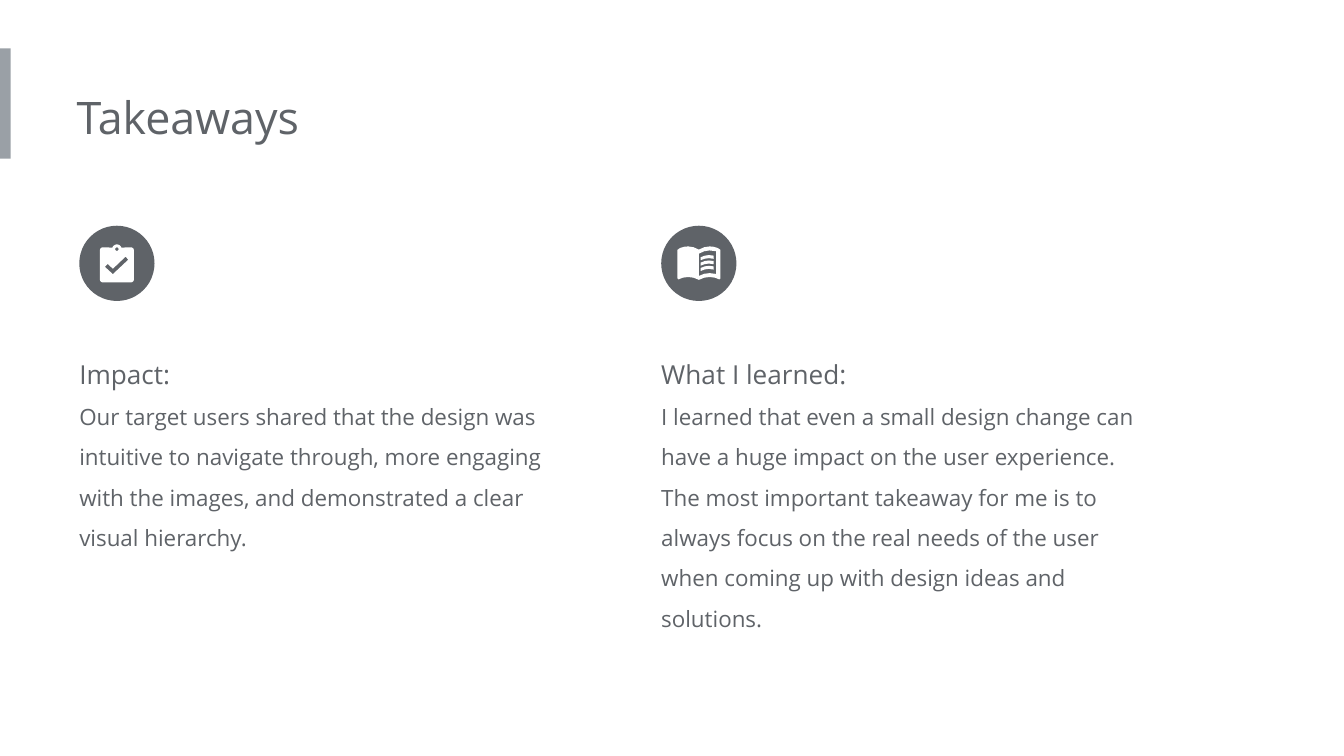
from dataclasses import dataclass
from math import cos, radians, sin

from pptx import Presentation
from pptx import util as u
from pptx.dml.color import RGBColor
from pptx.enum import shapes, text

COLUMNS = 1000
CELL = u.Inches(0.01)
ICON_UNITS = 560
FONT = "Open Sans"
GRAY, ACCENT, WHITE = "5F6368", "9AA0A6", "FFFFFF"


@dataclass
class Box:
    """A rectangle counted in grid columns and rows."""
    left: int
    top: int
    width: int
    height: int

    def lengths(self):
        """Return left, top, width and height as slide lengths."""
        return [n * CELL for n in (self.left, self.top, self.width, self.height)]


def color(value):
    """Turn a hex string into a colour."""
    return RGBColor.from_string(value)


def paint(shape, fill):
    """Give a shape a plain fill with no line or shadow."""
    shape.shadow.inherit = False
    shape.fill.solid()
    shape.fill.fore_color.rgb = color(fill)
    shape.line.fill.background()


def add_block(slide, box, kind, fill):
    """Add a plain preset shape."""
    paint(slide.shapes.add_shape(kind, *box.lengths()), fill)


def add_text(slide, box, lines, spacing=None):
    """Add a text box with one paragraph for each (wording, size) pair."""
    frame = slide.shapes.add_textbox(*box.lengths()).text_frame
    frame.word_wrap = True
    frame.auto_size = text.MSO_AUTO_SIZE.SHAPE_TO_FIT_TEXT
    frame.margin_left = 0
    frame.margin_top = frame.margin_right = frame.margin_bottom = u.Inches(0.1)
    for index, (wording, size) in enumerate(lines):
        paragraph = frame.add_paragraph() if index else frame.paragraphs[0]
        paragraph.line_spacing = spacing
        run = paragraph.add_run()
        run.text = wording
        run.font.name = FONT
        run.font.size = u.Pt(size)
        run.font.color.rgb = color(GRAY)


def arc(x, y, radius, first, last):
    """Return points along an arc, clockwise from the right, in degrees."""
    steps = max(6, (last - first) // 15)
    angles = [radians(first + (last - first) * i / steps) for i in range(steps + 1)]
    return [(x + radius * cos(a), y + radius * sin(a)) for a in angles]


def clipboard():
    """Return the pieces of a clipboard with a tick."""
    board = (arc(178, 185, 25, 180, 270) + arc(280, 175, 36, 200, 340)
             + arc(382, 185, 25, 270, 360) + arc(382, 397, 25, 0, 90)
             + arc(178, 397, 25, 90, 180))
    tick = [(250, 360), (190, 305), (212, 284), (250, 320), (344, 230), (365, 252)]
    return [[board, arc(280, 174, 13, 0, 360), tick]]


def open_book():
    """Return the pieces of an open book with three lines of print."""
    cover = [(120, 180), (140, 166), (170, 157), (200, 154), (240, 160), (280, 178),
             (320, 160), (360, 154), (390, 157), (420, 166), (440, 180), (440, 392),
             (432, 400), (400, 387), (360, 382), (320, 387), (280, 403), (240, 387),
             (200, 382), (160, 387), (128, 400), (120, 392)]
    page = [(280, 208), (320, 190), (360, 184), (408, 190),
            (408, 359), (360, 353), (320, 358), (280, 374)]
    band = [(294, 234), (325, 222), (356, 218), (390, 222),
            (390, 246), (356, 241), (325, 245), (294, 256)]
    print_lines = [[[(x, y + 40 * row) for x, y in band]] for row in range(3)]
    return [[cover, page]] + print_lines


def add_icon(slide, box, pieces):
    """Draw white outlines on a disc that fills the box."""
    add_block(slide, box, shapes.MSO_SHAPE.OVAL, GRAY)
    left, top, width, _ = box.lengths()
    for contours in pieces:
        builder = slide.shapes.build_freeform(*contours[0][0], scale=width / ICON_UNITS)
        for index, points in enumerate(contours):
            if index:
                builder.move_to(*points[0])
            builder.add_line_segments(points[1:], close=True)
        paint(builder.convert_to_shape(left, top), WHITE)


def add_heading(slide, box, title):
    """Add the accent bar at the slide's edge and the title beside it."""
    bar = Box(box.left, box.top, 8, box.height)
    add_block(slide, bar, shapes.MSO_SHAPE.RECTANGLE, ACCENT)
    add_text(slide, Box(box.left + 57, box.top + 21, 539, 61), [(title, 24)])


def add_takeaway(slide, box, pieces, heading, body):
    """Add an icon with a heading and a body below it."""
    add_icon(slide, Box(box.left, box.top, 56, 56), pieces)
    words = Box(box.left, box.top + 77, box.width, box.height - 77)
    add_text(slide, words, [(heading, 14), (body, 12)], 1.5)


def main():
    """Build the slide and save it."""
    presentation = Presentation()
    presentation.slide_width = COLUMNS * CELL
    presentation.slide_height = COLUMNS * CELL * 9 // 16
    slide = presentation.slides.add_slide(presentation.slide_layouts[6])
    add_heading(slide, Box(0, 36, COLUMNS, 82), "Takeaways")
    takeaways = [
        (clipboard(), "Impact:",
         "Our target users shared that the design was intuitive to navigate through, "
         "more engaging with the images, and demonstrated a clear visual hierarchy.", 244),
        (open_book(), "What I learned:",
         "I learned that even a small design change can have a huge impact on the user "
         "experience. The most important takeaway for me is to always focus on the real "
         "needs of the user when coming up with design ideas and solutions.", 304),
    ]
    for index, (pieces, heading, body, height) in enumerate(takeaways):
        box = Box(59 + 433 * index, 168, 377, height)
        add_takeaway(slide, box, pieces, heading, body)
    presentation.save("out.pptx")


if __name__ == "__main__":
    main()
